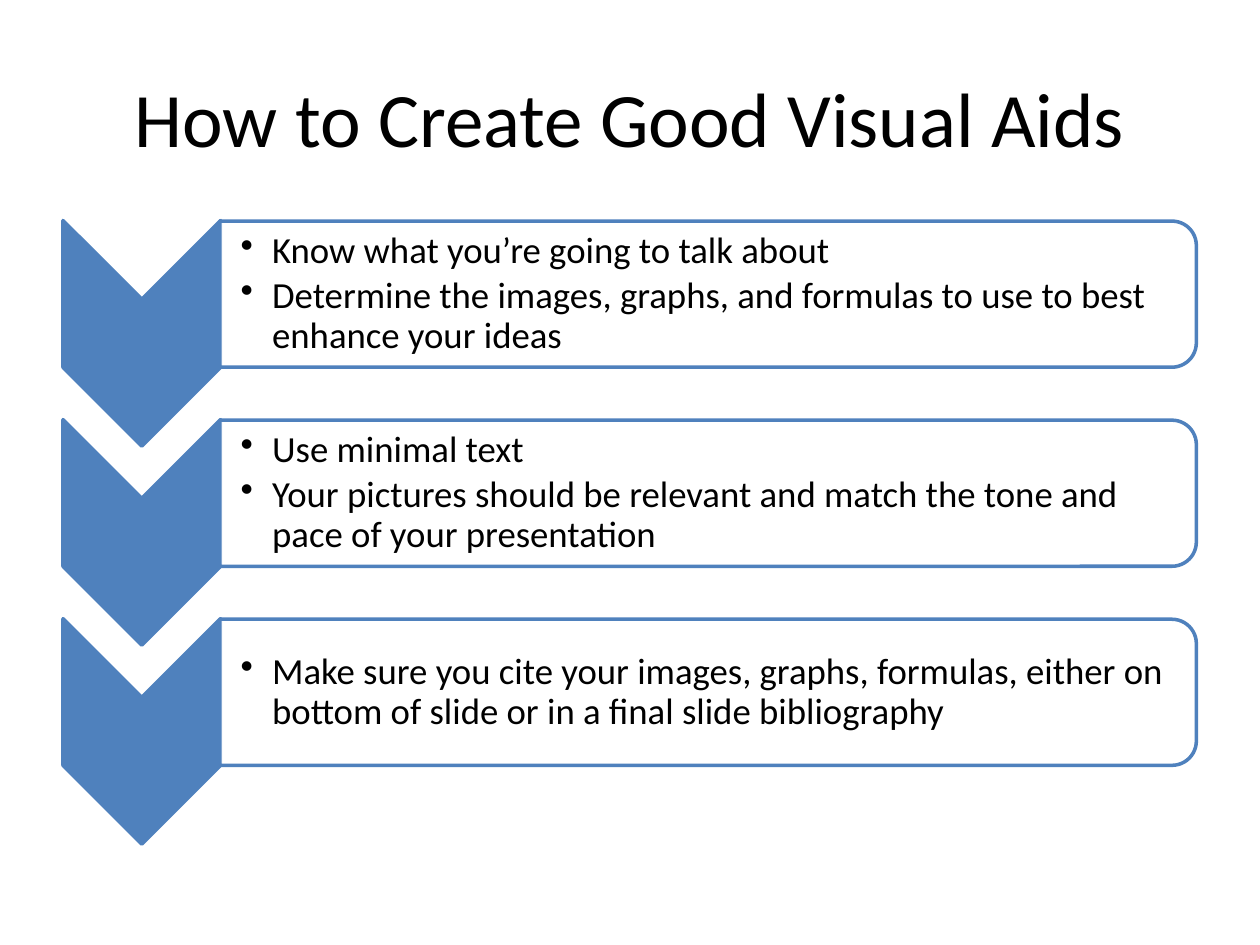
from dataclasses import dataclass

from lxml import etree
from pptx import Presentation
from pptx import util as u
from pptx.dml.color import RGBColor
from pptx.enum import shapes, text
from pptx.oxml.ns import qn

COLORS = {"accent": "4F81BD", "panel": "FFFFFF", "text": "000000"}
FONT = "Calibri"
FIRST_TOP = 2.02
ROW_PITCH = 1.58


@dataclass(frozen=True)
class Box:
    left: float
    top: float
    width: float
    height: float

    def lengths(self) -> list:
        return [u.Inches(v) for v in (self.left, self.top, self.width, self.height)]

    def moved_down(self, distance: float) -> "Box":
        return Box(self.left, self.top + distance, self.width, self.height)


@dataclass(frozen=True)
class Step:
    points: tuple[str, ...]


STEPS = [
    Step((
        "Know what you’re going to talk about",
        "Determine the images, graphs, and formulas to use to best enhance your ideas",
    )),
    Step((
        "Use minimal text",
        "Your pictures should be relevant and match the tone and pace of your presentation",
    )),
    Step((
        "Make sure you cite your images, graphs, formulas, either on bottom of slide "
        "or in a final slide bibliography",
    )),
]

# Boxes of the first row, before the 90 degree turn of the two shapes
CHEVRON = Box(0.23, FIRST_TOP, 1.79, 1.25)
PANEL = Box(5.04, -1.54, 1.16, 7.75)
POINTS = Box(1.75, 1.81, 7.69, 1.05)


def color(name: str) -> RGBColor:
    return RGBColor.from_string(COLORS[name])


def add_bullet(paragraph, indent: float) -> None:
    properties = paragraph._p.get_or_add_pPr()
    properties.set("marL", str(u.Inches(indent)))
    properties.set("indent", str(-u.Inches(indent)))
    etree.SubElement(properties, qn("a:buChar"), char="•")


def add_text(slide, box: Box, lines: tuple[str, ...], *, size: float,
             align=text.PP_ALIGN.LEFT, margins=(0.1, 0.05, 0.1, 0.05),
             bullet_indent: float = 0, line_spacing: float = 1,
             space_after: float = 0) -> None:
    """Add a vertically centred text box with one paragraph per line."""
    frame = slide.shapes.add_textbox(*box.lengths()).text_frame
    frame.word_wrap = True
    frame.vertical_anchor = text.MSO_ANCHOR.MIDDLE
    (frame.margin_left, frame.margin_top,
     frame.margin_right, frame.margin_bottom) = map(u.Inches, margins)
    for index, line in enumerate(lines):
        paragraph = frame.add_paragraph() if index else frame.paragraphs[0]
        paragraph.alignment = align
        paragraph.line_spacing = line_spacing
        paragraph.space_after = u.Pt(space_after)
        if bullet_indent:
            paragraph.level = 1
            add_bullet(paragraph, bullet_indent)
        run = paragraph.add_run()
        run.text = line
        run.font.name = FONT
        run.font.size = u.Pt(size)
        run.font.color.rgb = color("text")


def add_turned_shape(slide, kind, box: Box, fill: str, opacity: int = 100) -> None:
    """Add an accent-outlined shape turned by 90 degrees; opacity in percent."""
    shape = slide.shapes.add_shape(kind, *box.lengths())
    shape.rotation = 90
    shape.shadow.inherit = False
    shape.fill.solid()
    shape.fill.fore_color.rgb = color(fill)
    shape.line.color.rgb = color("accent")
    shape.line.width = u.Pt(2)
    if opacity < 100:
        fill_color = shape._element.spPr.find(qn("a:solidFill"))[0]
        etree.SubElement(fill_color, qn("a:alpha"), val=str(opacity * 1000))


def add_step(slide, step: Step, offset: float) -> None:
    add_turned_shape(slide, shapes.MSO_SHAPE.CHEVRON,
                     CHEVRON.moved_down(offset), "accent")
    add_turned_shape(slide, shapes.MSO_SHAPE.ROUND_2_SAME_RECTANGLE,
                     PANEL.moved_down(offset), "panel", opacity=90)
    add_text(slide, POINTS.moved_down(offset), step.points, size=21,
             margins=(0.16, 0.01, 0.01, 0.01), bullet_indent=0.25,
             line_spacing=0.9, space_after=3)


def main() -> None:
    presentation = Presentation()
    presentation.slide_width = u.Inches(10)
    presentation.slide_height = u.Inches(7.5)
    slide = presentation.slides.add_slide(presentation.slide_layouts[6])
    add_text(slide, Box(0.5, 0.3, 9, 1.25), ("How to Create Good Visual Aids",),
             size=44, align=text.PP_ALIGN.CENTER)
    for row, step in enumerate(STEPS):
        add_step(slide, step, row * ROW_PITCH)
    presentation.save("out.pptx")


if __name__ == "__main__":
    main()
